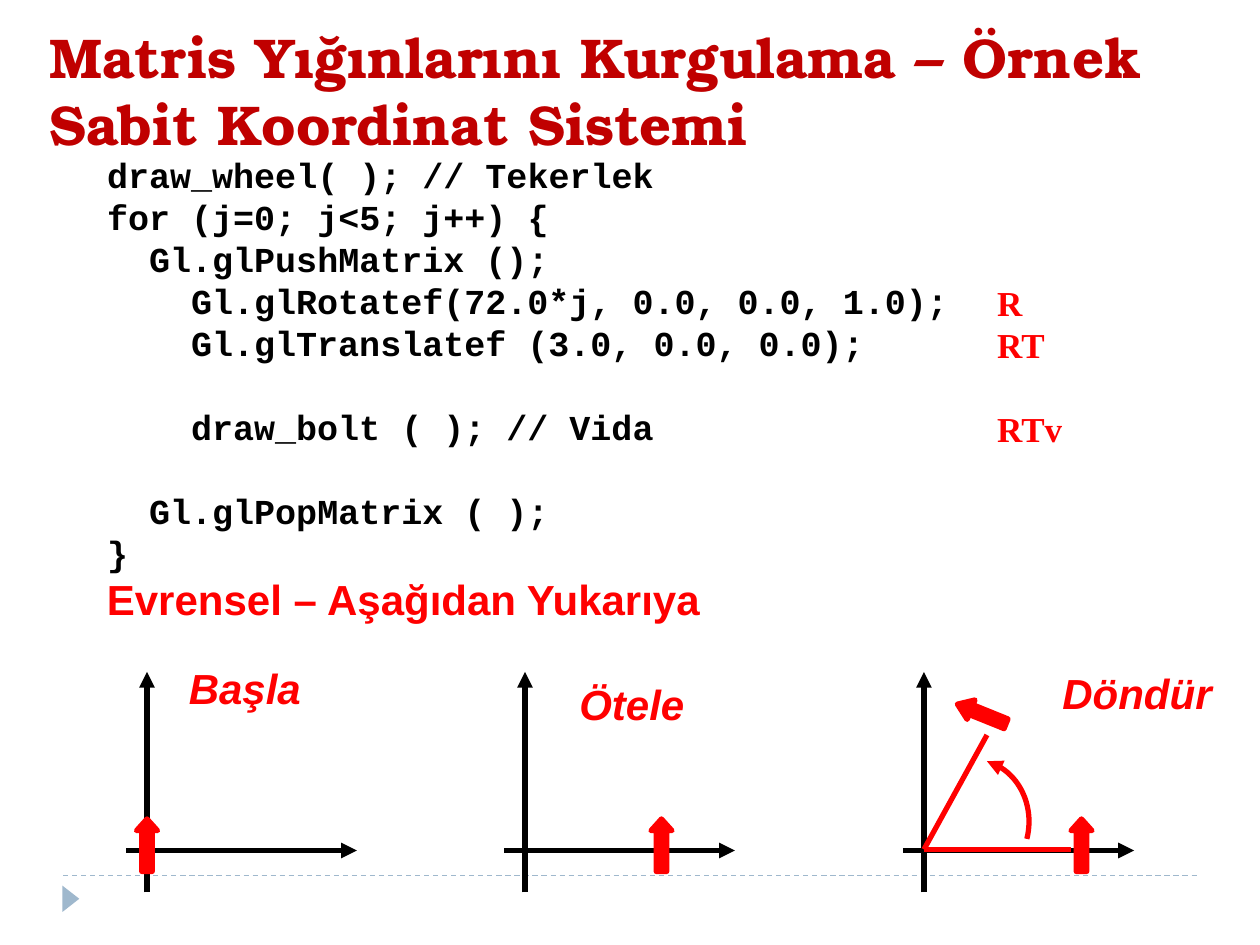
import pptx
import pptx.util
import pptx.dml.color
import pptx.enum.dml
import pptx.enum.shapes
import pptx.enum.text
import pptx.oxml.ns
from lxml import etree

RED, DARK_RED, BLACK, BLUE = "FF0000", "C00000", "000000", "9FB8CD"
SHAPES = pptx.enum.shapes.MSO_SHAPE
ANCHOR = pptx.enum.text.MSO_ANCHOR
FIT = pptx.enum.text.MSO_AUTO_SIZE

# (text, indent in characters, blank lines before)
CODE = [
    ("draw_wheel( ); // Tekerlek", 0, 0),
    ("for (j=0; j<5; j++) {", 0, 0),
    ("Gl.glPushMatrix ();", 2, 0),
    ("Gl.glRotatef(72.0*j, 0.0, 0.0, 1.0);", 4, 0),
    ("Gl.glTranslatef (3.0, 0.0, 0.0);", 4, 0),
    ("draw_bolt ( ); // Vida", 4, 1),
    ("Gl.glPopMatrix ( );", 2, 1),
    ("}", 0, 0),
]
MATRICES = [("R", 0, 0), ("RT", 0, 0), ("RTv", 0, 1)]


def color(hex_text):
    return pptx.dml.color.RGBColor.from_string(hex_text)


def grid(*cells):
    """Turn columns and rows into lengths; the slide has 120 columns and 90 rows."""
    return [pptx.util.Inches(c / 12) for c in cells]


def sub(parent, tag, **attributes):
    return etree.SubElement(parent, pptx.oxml.ns.qn(tag), attributes)


class Sketch:
    line_width = 3
    code_size = 20
    code_pitch = 24
    char_width = 12

    def __init__(self, prs):
        self.s = prs.slides.add_slide(prs.slide_layouts[1])
        self.title_box, self.body_box = self.s.placeholders

    def place(self, sp, box):
        sp.left, sp.top, sp.width, sp.height = grid(*box)

    def style_runs(self, tf, font, size, hex_text, italic=False):
        for p in tf.paragraphs:
            for r in p.runs:
                r.font.name, r.font.size = font, pptx.util.Pt(size)
                r.font.bold, r.font.italic = True, italic
                r.font.color.rgb = color(hex_text)

    def style_line(self, sp, hex_text, width, arrow=False):
        sp.line.color.rgb = color(hex_text)
        sp.line.width = pptx.util.Pt(width)
        if arrow:
            sub(sp.line._get_or_add_ln(), "a:tailEnd", type="triangle")

    def title(self, text, box):
        self.place(self.title_box, box)
        tf = self.title_box.text_frame
        tf.text = text
        tf.auto_size, tf.vertical_anchor = FIT.NONE, ANCHOR.TOP
        tf.paragraphs[0].alignment = pptx.enum.text.PP_ALIGN.LEFT
        self.style_runs(tf, "TeX Gyre Bonum", 32, DARK_RED)

    def listing(self, tf, rows, font, hex_text):
        """Fill a frame with evenly pitched lines, without bullets."""
        tf.text = "\n".join(text for text, _, _ in rows)
        for p, (_, indent, blanks) in zip(tf.paragraphs, rows):
            p.line_spacing = pptx.util.Pt(self.code_pitch)
            p.space_before = pptx.util.Pt(self.code_pitch * blanks)
            pPr = p._p.get_or_add_pPr()
            pPr.set("marL", str(pptx.util.Pt(self.char_width * indent)))
            pPr.set("indent", "0")
            sub(pPr, "a:buNone")
        self.style_runs(tf, font, self.code_size, hex_text)

    def code(self, rows, box):
        self.place(self.body_box, box)
        tf = self.body_box.text_frame
        tf.auto_size, tf.vertical_anchor = FIT.NONE, ANCHOR.MIDDLE
        self.listing(tf, rows, "Courier New", BLACK)

    def text_box(self, box):
        tf = self.s.shapes.add_textbox(*grid(*box)).text_frame
        tf.word_wrap, tf.auto_size = False, FIT.SHAPE_TO_FIT_TEXT
        return tf

    def label(self, text, box, italic=True):
        tf = self.text_box(box)
        tf.text = text
        self.style_runs(tf, "Arial", 24, RED, italic)

    def line(self, start, end, hex_text, width=line_width, arrow=False):
        straight = pptx.enum.shapes.MSO_CONNECTOR.STRAIGHT
        sp = self.s.shapes.add_connector(straight, *grid(*start, *end))
        self.style_line(sp, hex_text, width, arrow)
        sub(sp._element.spPr, "a:effectLst")
        return sp

    def axes(self, left, origin):
        self.line((left, 81), (left + 22, 81), BLACK, arrow=True)
        self.line((origin, 85), (origin, 64), BLACK, arrow=True)

    def shape(self, kind, box, hex_text, rotation=0):
        sp = self.s.shapes.add_shape(kind, *grid(*box))
        sp.shadow.inherit = False
        sp.rotation = rotation
        sp.fill.solid()
        sp.fill.fore_color.rgb = color(hex_text)
        sp.line.fill.background()
        return sp

    def bolt(self, left, top, head=0.556, rotation=0):
        sp = self.shape(SHAPES.UP_ARROW, (left, top, 2, 5), RED, rotation)
        sp.adjustments[0], sp.adjustments[1] = 0.5, head
        self.style_line(sp, RED, self.line_width)

    def curve(self, a, b, c, d, steps=24):
        """Draw a cubic Bezier curve that ends in an arrowhead."""
        points = []
        for t in (i / steps for i in range(steps + 1)):
            weights = (1 - t) ** 3, 3 * t * (1 - t) ** 2, 3 * t * t * (1 - t), t ** 3
            points.append(grid(*(sum(w * v for w, v in zip(weights, axis))
                                 for axis in zip(a, b, c, d))))
        builder = self.s.shapes.build_freeform(*points[0])
        builder.add_line_segments(points[1:], close=False)
        sp = builder.convert_to_shape()
        sp.shadow.inherit = False
        sp.fill.background()
        self.style_line(sp, RED, self.line_width, arrow=True)


def main():
    prs = pptx.Presentation()
    prs.slide_width, prs.slide_height = grid(120, 90)
    sketch = Sketch(prs)

    footer = sketch.line((6, 83.4), (114, 83.4), BLUE, 0.75)
    footer.line.dash_style = pptx.enum.dml.MSO_LINE.DASH
    sketch.shape(SHAPES.ISOSCELES_TRIANGLE, (5.5, 84.8, 2.5, 1.6), BLUE, 90)

    sketch.title("Matris Yığınlarını Kurgulama – Örnek\vSabit Koordinat Sistemi",
                 (3.5, 1.5, 112.5, 15))
    sketch.code(CODE, (9, 13.8, 83.2, 41.6))
    sketch.listing(sketch.text_box((93.8, 26.2, 8.6, 17.4)), MATRICES,
                   "Times New Roman", RED)
    sketch.label("Evrensel – Aşağıdan Yukarıya", (9, 54, 59.4, 6), italic=False)

    for left, origin in [(12, 14), (48, 50), (86, 88)]:
        sketch.axes(left, origin)
    for left in (13, 62, 102):
        sketch.bolt(left, 78)
    sketch.bolt(92.5, 65.5, head=0.703, rotation=292)

    sketch.curve((97.8, 79.9), (98.6, 76.7), (97, 73.4), (94, 72.5))
    for end in [(102, 80.9), (94, 70)]:
        sketch.line((88, 80.9), end, RED)

    sketch.label("Başla", (16.8, 62.5, 13.2, 6))
    sketch.label("Ötele", (54, 64, 12.5, 6))
    sketch.label("Döndür", (100, 63, 16.8, 6))
    prs.save("out.pptx")


if __name__ == "__main__":
    main()
